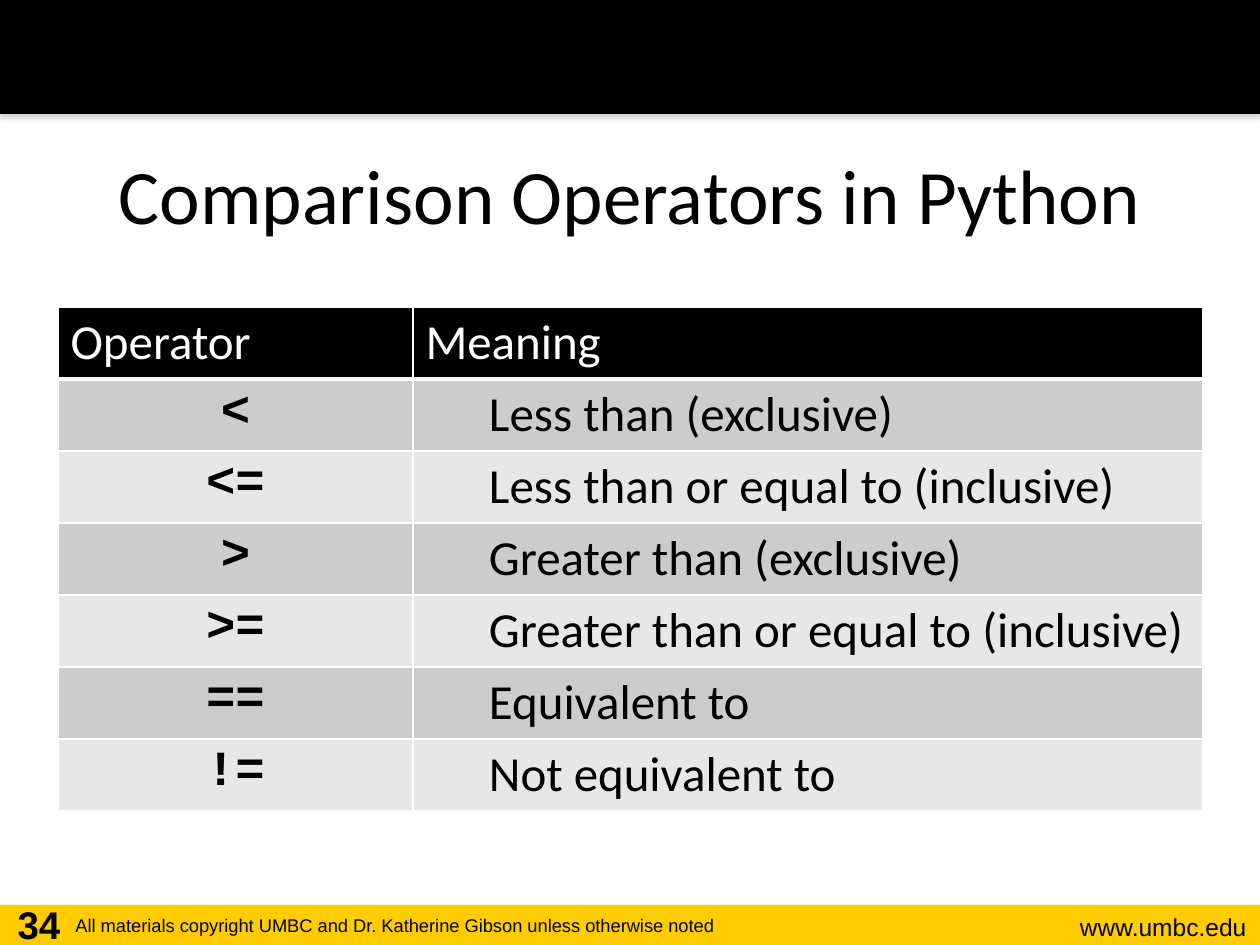
from lxml.etree import SubElement as Sub
from pptx import Presentation
from pptx.dml.color import RGBColor as RGB
from pptx.enum.shapes import MSO_SHAPE as Kind
from pptx.enum.text import MSO_ANCHOR as Anchor, PP_ALIGN as Align
from pptx.oxml.ns import qn
from pptx.util import Emu, Pt

BLACK = RGB(0, 0, 0)
WHITE = RGB(255, 255, 255)
GOLD = RGB(0xFF, 0xCC, 0x00)
DARK = RGB(0xCC, 0xCC, 0xCC)
LIGHT = RGB(0xE7, 0xE7, 0xE7)
GRAY = RGB(0x80, 0x80, 0x80)

WIDE, HIGH = 1260, 945
HEAD = ("Operator", "Meaning")
ROWS = [
    ("<", "Less than (exclusive)"),
    ("<=", "Less than or equal to (inclusive)"),
    (">", "Greater than (exclusive)"),
    (">=", "Greater than or equal to (inclusive)"),
    ("==", "Equivalent to"),
    ("!=", "Not equivalent to"),
]


def px(n):
    return Emu(round(n * 914400 / 126))


class Deck:
    sans, body, code = "Arial", "Calibri", "Courier New"

    def __init__(self):
        self.prs = Presentation()
        self.prs.slide_width, self.prs.slide_height = px(WIDE), px(HIGH)
        self.slide = self.prs.slides.add_slide(self.prs.slide_layouts[6])

    def bar(self, x, y, w, h, color):
        shape = self.slide.shapes.add_shape(Kind.RECTANGLE, px(x), px(y), px(w), px(h))
        shape.shadow.inherit = False
        shape.fill.solid()
        shape.fill.fore_color.rgb = color
        shape.line.fill.background()
        return shape

    def shade(self, shape, blur, dist, alpha):
        fx = shape._element.spPr.find(qn("a:effectLst"))
        outer = Sub(fx, qn("a:outerShdw"), blurRad=str(Pt(blur)),
                    dist=str(Pt(dist)), dir="5400000", rotWithShape="0")
        color = Sub(outer, qn("a:srgbClr"), val=str(GRAY))
        Sub(color, qn("a:alpha"), val=str(alpha * 1000))

    def run(self, para, text, size, font, color=BLACK, bold=False, align=Align.LEFT):
        para.alignment = align
        run = para.add_run()
        run.text = text
        run.font.size, run.font.name, run.font.bold = Pt(size), font, bold
        run.font.color.rgb = color

    def text(self, x, y, w, h, text, size, font, anchor=Anchor.TOP, **look):
        frame = self.slide.shapes.add_textbox(px(x), px(y), px(w), px(h)).text_frame
        frame.word_wrap = True
        frame.vertical_anchor = anchor
        self.run(frame.paragraphs[0], text, size, font, **look)

    def edge(self, cell, **sides):
        props = cell._tc.get_or_add_tcPr()
        for i, side in enumerate("LRTB"):
            line = props.makeelement(qn("a:ln" + side), {"w": str(Pt(sides.get(side, 1)))})
            Sub(Sub(line, qn("a:solidFill")), qn("a:srgbClr"), val=str(WHITE))
            props.insert(i, line)

    def cell(self, cell, fill, text, font, **look):
        cell.fill.solid()
        cell.fill.fore_color.rgb = fill
        self.run(cell.text_frame.paragraphs[0], text, 28, font, **look)

    def table(self, x, y, cols, step, head, rows):
        grid = self.slide.shapes.add_table(
            len(rows) + 1, len(cols), px(x), px(y), px(sum(cols)),
            px(step * (len(rows) + 1))).table
        for col, w in zip(grid.columns, cols):
            col.width = px(w)
        # Header row
        for c, label in enumerate(head):
            self.cell(grid.cell(0, c), BLACK, label, self.body, color=WHITE)
            self.edge(grid.cell(0, c), B=3)
        # Banded rows, with the meaning indented
        for r, (sign, note) in enumerate(rows, 1):
            fill = DARK if r % 2 else LIGHT
            left, right = grid.cell(r, 0), grid.cell(r, 1)
            self.cell(left, fill, sign, self.code, bold=True, align=Align.CENTER)
            self.cell(right, fill, note, self.body)
            right.margin_left = px(76)
            self.edge(left)
            self.edge(right)


def main():
    deck = Deck()

    # Bars at foot and top
    deck.bar(0, 905, WIDE, 40, GOLD)
    deck.shade(deck.bar(0, 0, WIDE, 114, BLACK), 3.1, 1.8, 35)

    # Footer
    deck.text(1008, 906, 251, 43, "www.umbc.edu", 14, deck.sans, align=Align.RIGHT)
    deck.text(63, 908, 827, 37, "All materials copyright UMBC and Dr. Katherine Gibson "
              "unless otherwise noted", 10.5, deck.sans)
    deck.text(0, 895, 78, 50, "34", 22, deck.sans, bold=True, align=Align.CENTER)

    # Title and table
    deck.text(63, 115, 1134, 158, "Comparison Operators in Python", 44, deck.body,
              anchor=Anchor.MIDDLE, align=Align.CENTER)
    deck.table(58, 307, (355, 790), 72, HEAD, ROWS)

    deck.prs.save("out.pptx")


if __name__ == "__main__":
    main()
